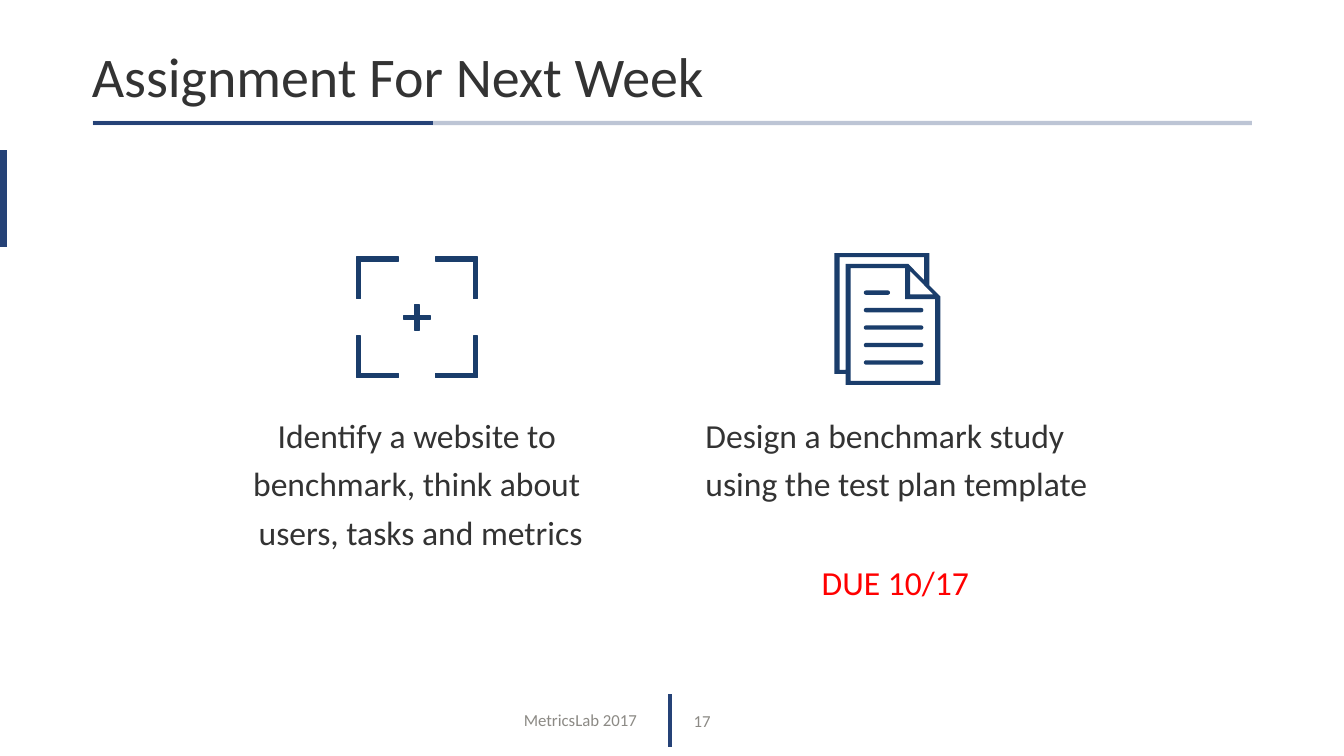
from dataclasses import dataclass
from itertools import product

from lxml.etree import SubElement
from pptx import Presentation
from pptx.dml.color import RGBColor
from pptx.enum.shapes import MSO_CONNECTOR, MSO_SHAPE
from pptx.enum.text import MSO_ANCHOR, MSO_AUTO_SIZE, PP_ALIGN
from pptx.oxml.ns import qn
from pptx.util import Cm, Pt


@dataclass(frozen=True)
class Theme:
    font: str = "Calibri"
    ink: str = "333333"
    muted: str = "8C8A85"
    alert: str = "FF0000"
    accent: str = "254277"
    icon: str = "1A3D6B"
    title_size: int = 40
    body_size: int = 24
    footer_size: int = 12


THEME = Theme()
BODY_SPACING = {"line_spacing": 1.2, "space_before": Pt(18), "space_after": Pt(18)}
CENTERED = {**BODY_SPACING, "alignment": PP_ALIGN.CENTER}


def apply_format(target, values):
    for name, value in values.items():
        setattr(target, name, value)


class SlideBuilder:
    def __init__(self, deck, theme):
        self.theme = theme
        self.page = deck.slides.add_slide(deck.slide_layouts[5])
        self.shapes = self.page.shapes

    def fill_text(self, box, paras, size, **frame_format):
        """Each para is a tuple of text, colour and paragraph format."""
        frame = box.text_frame
        apply_format(frame, {"word_wrap": True, **frame_format})
        for index, (text, color, para_format) in enumerate(paras):
            para = frame.add_paragraph() if index else frame.paragraphs[0]
            para.text = text
            apply_format(para, para_format)
            for span in para.runs:
                apply_format(span.font, {"name": self.theme.font, "size": Pt(size)})
                span.font.color.rgb = RGBColor.from_string(color)

    def title(self, text, *bounds):
        box = self.shapes.title
        apply_format(box, dict(zip(("left", "top", "width", "height"), map(Cm, bounds))))
        para_format = {"alignment": PP_ALIGN.LEFT, "line_spacing": 0.9}
        self.fill_text(box, [(text, self.theme.ink, para_format)], self.theme.title_size,
                       vertical_anchor=MSO_ANCHOR.MIDDLE, auto_size=MSO_AUTO_SIZE.NONE)

    def text(self, bounds, paras, size, **frame_format):
        box = self.shapes.add_textbox(*map(Cm, bounds))
        self.fill_text(box, paras, size, **frame_format)

    def line(self, start, end, width, opacity=None):
        rule = self.shapes.add_connector(MSO_CONNECTOR.STRAIGHT, *map(Cm, (*start, *end)))
        rule.line.width = Pt(width)
        rule.line.color.rgb = RGBColor.from_string(self.theme.accent)
        properties = rule._element.spPr
        if opacity is not None:
            color = properties.find(".//" + qn("a:srgbClr"))
            SubElement(color, qn("a:alpha")).set("val", str(opacity * 1000))
        SubElement(properties, qn("a:effectLst"))

    def icon_group(self):
        return self.shapes.add_group_shape().shapes

    def paint(self, shape, outline=None):
        shape.shadow.inherit = False
        shape.fill.solid()
        shape.fill.fore_color.rgb = RGBColor.from_string(self.theme.icon)
        if outline:
            shape.line.width = Pt(outline)
            shape.line.color.rgb = RGBColor.from_string(self.theme.icon)
        else:
            shape.line.fill.background()

    def outline(self, group, contours, outline=None):
        contours = [[(Cm(x), Cm(y)) for x, y in points] for points in contours]
        builder = group.build_freeform(*contours[0][0], scale=1.0)
        for index, points in enumerate(contours):
            if index:
                builder.move_to(*points[0])
            builder.add_line_segments(points[1:], close=True)
        self.paint(builder.convert_to_shape(), outline)

    def bar(self, group, *bounds):
        bar = group.add_shape(MSO_SHAPE.ROUNDED_RECTANGLE, *map(Cm, bounds))
        bar.adjustments[0] = 0.5
        self.paint(bar)


def draw_target(slide, center_x, center_y):
    group = slide.icon_group()
    # Plus sign: one quarter turned around the centre
    arm, half = 0.33, 0.05
    quarter = [(-half, -half), (-half, -arm), (half, -arm)]
    plus = []
    for _ in range(4):
        plus += [(center_x + x, center_y + y) for x, y in quarter]
        quarter = [(-y, x) for x, y in quarter]
    slide.outline(group, [plus], outline=1)
    # Corner brackets: one bracket mirrored both ways
    edge, inner, tip = 1.52, 1.42, 0.47
    bracket = [(edge, edge), (tip, edge), (tip, inner),
               (inner, inner), (inner, tip), (edge, tip)]
    for side_x, side_y in product((-1, 1), repeat=2):
        points = [(center_x + side_x * x, center_y + side_y * y) for x, y in bracket]
        slide.outline(group, [points], outline=1)


def draw_documents(slide):
    group = slide.icon_group()
    # Text lines on the front sheet
    for row in range(5):
        slide.bar(group, 21.77, 7.32 + 0.44 * row, 1.5 if row else 0.66, 0.11)
    # Silhouette, then the openings: fold, back sheet, front sheet
    slide.outline(group, [
        [(23.42, 7.19), (23.42, 6.38), (21.03, 6.38), (21.03, 9.42),
         (21.31, 9.42), (21.31, 9.7), (23.7, 9.7), (23.7, 7.47)],
        [(22.94, 6.83), (23.52, 7.42), (22.94, 7.42)],
        [(21.16, 9.32), (21.16, 6.48), (23.29, 6.48), (23.29, 7.06),
         (22.89, 6.65), (21.31, 6.65), (21.31, 9.32)],
        [(21.44, 9.6), (21.44, 6.76), (22.81, 6.76), (22.81, 7.54),
         (23.57, 7.54), (23.57, 9.6)],
    ])


def main():
    deck = Presentation()
    apply_format(deck, {"slide_width": Cm(33.87), "slide_height": Cm(19.05)})
    slide = SlideBuilder(deck, THEME)

    # Side tab and title rule
    slide.line((0.08, 3.78), (0.08, 6.22), 5)
    slide.line((2.34, 3.1), (31.55, 3.1), 3, opacity=30)
    slide.line((2.34, 3.1), (10.9, 3.1), 3)
    slide.title("Assignment For Next Week", 2.06, 1.02, 29.21, 1.96)

    # Footer
    slide.text((12.95, 17.75, 3.71, 0.76), [("MetricsLab 2017", THEME.muted, {})],
               THEME.footer_size, word_wrap=False, vertical_anchor=MSO_ANCHOR.MIDDLE)
    slide.line((16.89, 17.5), (16.89, 18.82), 3.25)
    slide.text((16.36, 17.7, 1.8, 0.91),
               [("17", THEME.muted, {"alignment": PP_ALIGN.RIGHT})],
               THEME.footer_size, vertical_anchor=MSO_ANCHOR.MIDDLE)

    # Assignment steps
    slide.text((4.88, 10.13, 11.25, 3.96),
               [("Identify a website to benchmark, think about\v users, tasks and metrics",
                 THEME.ink, CENTERED)], THEME.body_size)
    slide.text((17.53, 10.13, 10.26, 5.33),
               [("Design a benchmark study using the test plan template",
                 THEME.ink, BODY_SPACING),
                ("DUE 10/17 ", THEME.alert, CENTERED)], THEME.body_size)

    # Icons
    draw_target(slide, 10.51, 8)
    draw_documents(slide)

    deck.save("out.pptx")


if __name__ == "__main__":
    main()
